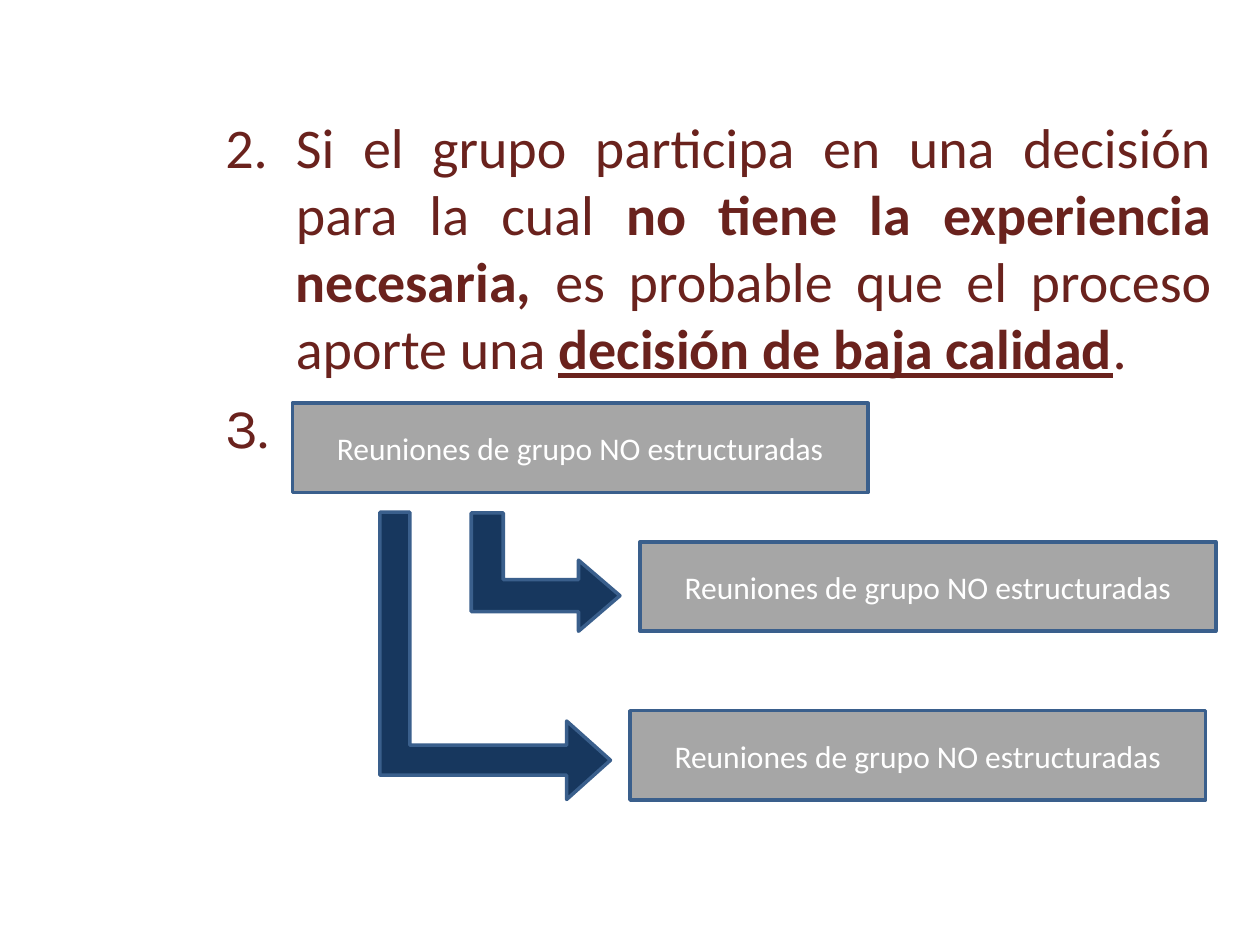
from lxml import etree
from pptx import Presentation
from pptx.dml.color import RGBColor
from pptx.enum.shapes import MSO_SHAPE
from pptx.enum.text import MSO_ANCHOR, PP_ALIGN
from pptx.oxml.ns import qn
from pptx.util import Inches, Pt

RECT, ARROW = MSO_SHAPE.RECTANGLE, MSO_SHAPE.BENT_UP_ARROW
MIDDLE = MSO_ANCHOR.MIDDLE
CENTER, JUSTIFY, LEFT = PP_ALIGN.CENTER, PP_ALIGN.JUSTIFY, PP_ALIGN.LEFT
COLORS = {"text": "6A221D", "box": "A6A6A6", "edge": "3A5F8C",
          "arrow": "17375E", "white": "FFFFFF"}
LABEL = "Reuniones de grupo NO estructuradas"


def color(name):
    return RGBColor.from_string(COLORS[name])


def write(para, text, size=32, font="Calibri", ink="text", bold=False, line=False):
    run = para.add_run()
    run.text = text
    style = run.font
    style.size, style.name = Pt(size), font
    style.bold, style.underline = bold, line
    style.color.rgb = color(ink)


def number(para, start):
    """Give the paragraph a hanging automatic number."""
    props = para._p.get_or_add_pPr()
    props.set("marL", str(Inches(0.56)))
    props.set("indent", str(-Inches(0.56)))
    etree.SubElement(props, qn("a:buFont"), typeface="+mj-lt")
    etree.SubElement(props, qn("a:buAutoNum"), type="arabicPeriod", startAt=str(start))


def add_list(slide):
    frame = slide.shapes.add_textbox(
        Inches(1.69), Inches(0.84), Inches(8.03), Inches(5.86)).text_frame
    frame.word_wrap = True
    first = frame.paragraphs[0]
    first.alignment = JUSTIFY
    number(first, 2)
    write(first, "Si el grupo participa en una decisión para la cual ")
    write(first, "no tiene la experiencia necesaria,", bold=True)
    write(first, " es probable que el proceso aporte una ")
    write(first, "decisión de baja calidad", bold=True, line=True)
    write(first, ".")
    second = frame.add_paragraph()
    second.alignment = LEFT
    second.space_before = Pt(6.4)
    number(second, 2)
    write(second, " ", font="Karla")


def add_shape(slide, kind, left, top, width, height, fill):
    shape = slide.shapes.add_shape(
        kind, Inches(left), Inches(top), Inches(width), Inches(height))
    shape.shadow.inherit = False
    shape.fill.solid()
    shape.fill.fore_color.rgb = color(fill)
    shape.line.color.rgb = color("edge")
    shape.line.width = Pt(2)
    return shape


def add_box(slide, left, top):
    frame = add_shape(slide, RECT, left, top, 4.57, 0.71, "box").text_frame
    frame.word_wrap = True
    frame.vertical_anchor = MIDDLE
    para = frame.paragraphs[0]
    para.alignment = CENTER
    write(para, LABEL, size=18, ink="white")


def add_arrow(slide, left, top, width, height, bends):
    shape = add_shape(slide, ARROW, left, top, width, height, "arrow")
    shape.rotation = 90
    for i, bend in enumerate(bends):
        shape.adjustments[i] = bend


def main():
    deck = Presentation()
    deck.slide_width, deck.slide_height = Inches(10), Inches(7.5)
    slide = deck.slides.add_slide(deck.slide_layouts[6])
    add_list(slide)
    for left, top in ((2.32, 3.2), (5.08, 4.3), (5, 5.64)):
        add_box(slide, left, top)
    add_arrow(slide, 3.86, 3.95, 0.94, 1.18, (0.27, 0.3, 0.35))
    add_arrow(slide, 2.79, 4.29, 2.28, 1.83, (0.13, 0.17, 0.19))
    deck.save("out.pptx")


if __name__ == "__main__":
    main()
